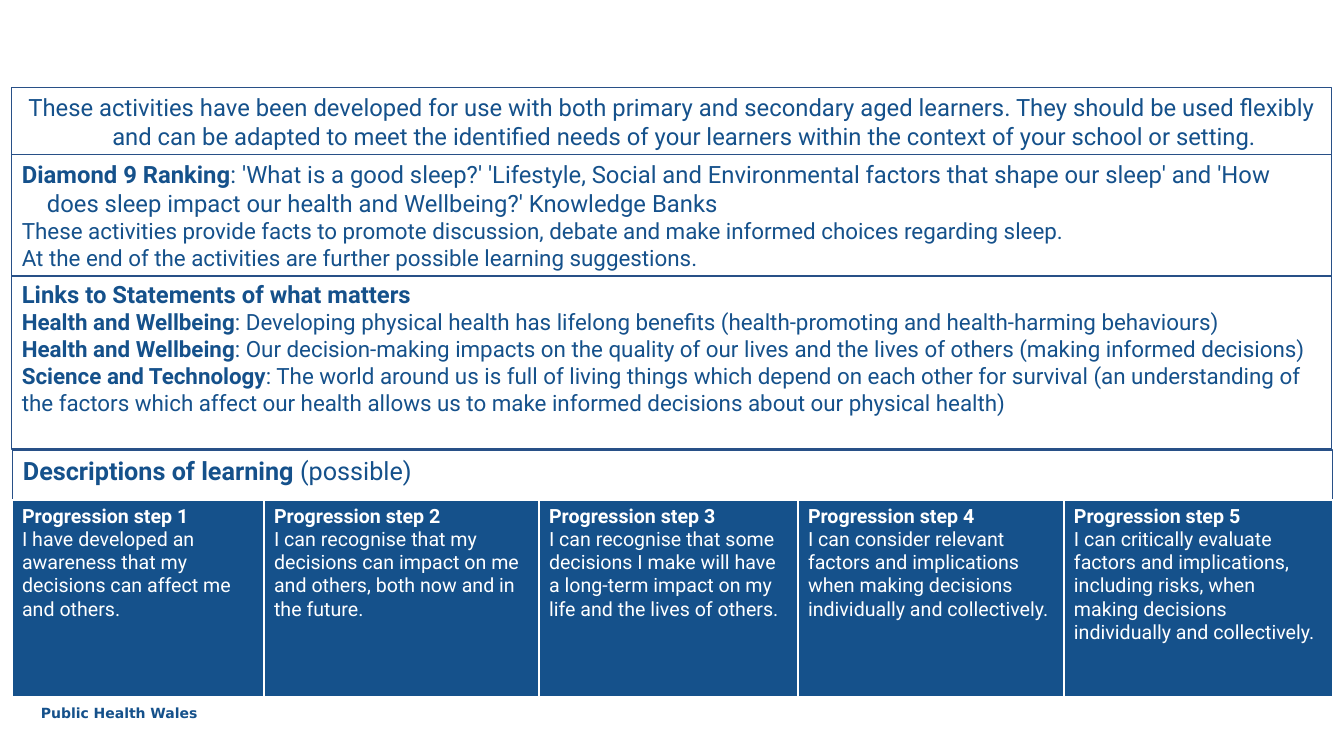
from lxml.etree import SubElement
from pptx import Presentation
from pptx.dml.color import RGBColor
from pptx.enum.shapes import MSO_SHAPE as Shape
from pptx.enum.text import MSO_ANCHOR as Anchor, PP_ALIGN as Align
from pptx.oxml.ns import qn
from pptx.util import Emu, Pt

NAVY, WHITE, OUTLINE = "15518B", "FFFFFF", "285087"
EMU_PER_PX = 914400 / 100.8
HANGING = 25

INTRO = [[("These activities have been developed for use with both primary and secondary "
           "aged learners. They should be used flexibly and can be adapted to meet the "
           "identified needs of your learners within the context of your school or setting.",
           17, False)]]
RANKING = [
    [("Diamond 9 Ranking", 17, True),
     (": 'What is a good sleep?' 'Lifestyle, Social and Environmental factors that shape "
      "our sleep' and 'How does sleep impact our health and Wellbeing?' Knowledge Banks",
      17, False)],
    [("These activities provide facts to promote discussion, debate and make informed "
      "choices regarding sleep.", 16, False)],
    [("At the end of the activities are further possible learning suggestions.", 16, False)],
]
STATEMENTS = [
    ("Health and Wellbeing", ": Developing physical health has lifelong benefits "
     "(health-promoting and health-harming behaviours)"),
    ("Health and Wellbeing", ": Our decision-making impacts on the quality of our lives "
     "and the lives of others (making informed decisions)"),
    ("Science and Technology", ": The world around us is full of living things which "
     "depend on each other for survival (an understanding of the factors which affect our "
     "health allows us to make informed decisions about our physical health)"),
]
LINKS = [[("Links to Statements of what matters", 17, True)]] + [
    [(area, 16, True), (statement, 16, False)] for area, statement in STATEMENTS]
DESCRIPTIONS = [[("Descriptions of learning ", 18, True), ("(possible)", 18, False)]]
STEPS = [
    (252, "I have developed an awareness that my decisions can affect me and others."),
    (275, "I can recognise that my decisions can impact on me and others, both now and in "
          "the future."),
    (259, "I can recognise that some decisions I make will have a long-term impact on my "
          "life and the lives of others."),
    (266, "I can consider relevant factors and implications when making decisions "
          "individually and collectively."),
    (269, "I can critically evaluate factors and implications, including risks, when "
          "making decisions individually and collectively."),
]


def px(length):
    return Emu(round(length * EMU_PER_PX))


def color(value):
    return RGBColor.from_string(value)


class SlideBuilder:
    def __init__(self, slide, font="Roboto"):
        self.slide = slide
        self.font = font

    def fill_text(self, frame, paragraphs, ink=NAVY, font=None, align=Align.LEFT,
                  indents=()):
        """Fill a frame; each paragraph is a list of (text, size, bold) spans."""
        frame.word_wrap = True
        for index, spans in enumerate(paragraphs):
            para = frame.paragraphs[0] if index == 0 else frame.add_paragraph()
            para.alignment = align
            if index < len(indents):
                properties = para._p.get_or_add_pPr()
                properties.set("marL", str(px(indents[index])))
                properties.set("indent", str(-px(indents[index])))
            for text, size, bold in spans:
                span = para.add_run()
                span.text = text
                formats = {"name": font or self.font, "size": Pt(size), "bold": bold}
                for name, value in formats.items():
                    setattr(span.font, name, value)
                span.font.color.rgb = color(ink)

    def text(self, left, top, width, height, paragraphs, **style):
        box = self.slide.shapes.add_textbox(*map(px, (left, top, width, height)))
        self.fill_text(box.text_frame, paragraphs, **style)

    def panel(self, left, top, width, height, paragraphs, **style):
        box = self.slide.shapes.add_shape(Shape.RECTANGLE,
                                          *map(px, (left, top, width, height)))
        box.shadow.inherit = False
        box.fill.background()
        box.line.color.rgb = color(OUTLINE)
        box.line.width = Pt(0.75)
        box.text_frame.vertical_anchor = Anchor.TOP
        self.fill_text(box.text_frame, paragraphs, **style)

    def border(self, cell, side, width):
        line = SubElement(cell._tc.get_or_add_tcPr(), qn(f"a:ln{side}"), w=str(Pt(width)))
        SubElement(SubElement(line, qn("a:solidFill")), qn("a:srgbClr"), val=WHITE)

    def steps(self, left, top, height, columns):
        """Add a one-row table with a numbered step for each (width, text)."""
        width = sum(column_width for column_width, _ in columns)
        table = self.slide.shapes.add_table(
            1, len(columns), *map(px, (left, top, width, height))).table
        table.first_row = table.horz_banding = False
        for index, (column_width, text) in enumerate(columns):
            table.columns[index].width = px(column_width)
            cell = table.cell(0, index)
            for side, weight in {"L": 1, "R": 1, "T": 1, "B": 3}.items():
                self.border(cell, side, weight)
            cell.fill.solid()
            cell.fill.fore_color.rgb = color(NAVY)
            self.fill_text(cell.text_frame, [[(f"Progression step {index + 1}", 14, True)],
                                             [(text, 14, False)]], ink=WHITE)


def main():
    deck = Presentation()
    deck.slide_width, deck.slide_height = px(1344), px(756)
    page = SlideBuilder(deck.slides.add_slide(deck.slide_layouts[6]))
    page.text(31, 700, 182, 27, [[("Public Health Wales", 10, True)]], font="DejaVu Sans")
    page.panel(12, 88, 1320, 67, INTRO, align=Align.CENTER, indents=[HANGING])
    page.panel(12, 275, 1320, 174, LINKS, indents=[HANGING] * 3)
    page.panel(13, 450, 1320, 176, DESCRIPTIONS, indents=[HANGING])
    page.panel(12, 155, 1320, 122, RANKING, indents=[HANGING] * 3)
    page.steps(12, 500, 198, STEPS)
    deck.save("out.pptx")


if __name__ == "__main__":
    main()
